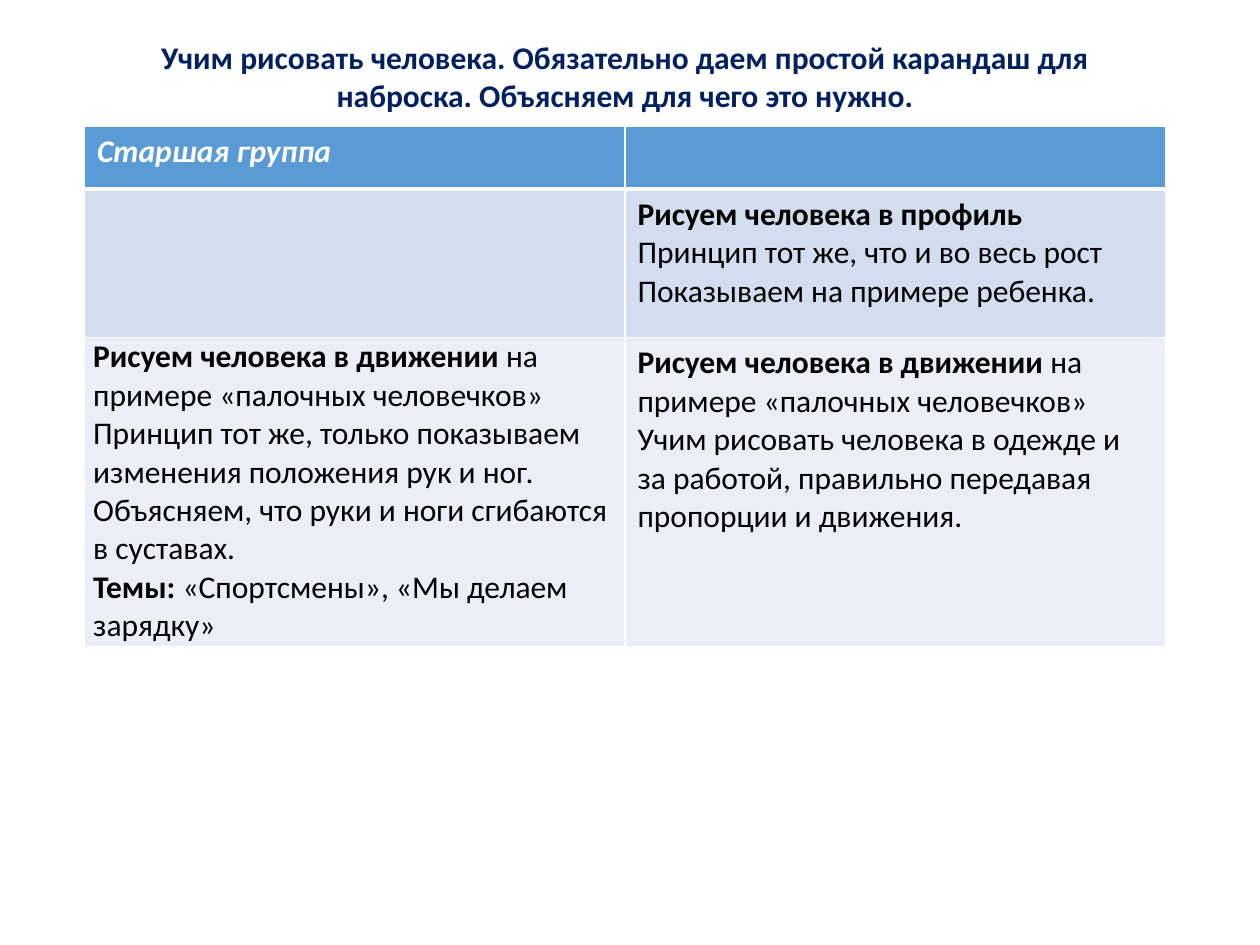
import pptx
import pptx.dml.color
import pptx.enum.text
import pptx.oxml
import pptx.oxml.ns
import pptx.util

Inches = pptx.util.Inches

THEME = {
    "font": "Calibri",
    "size": 18,
    "title": "002060",
    "text": "000000",
    "header_text": "FFFFFF",
    "border": "FFFFFF",
    "row_fills": ["5B9BD5", "D2DEEF", "EAEFF7"],
}

TITLE = ("Учим рисовать человека. Обязательно даем простой карандаш для наброска. "
         "Объясняем для чего это нужно.")

# Each cell is a list of paragraphs; each paragraph is a list of (text, bold) runs.
MOVEMENT = [("Рисуем человека в движении ", True),
            ("на примере «палочных человечков»", False)]
ROWS = [
    [[[("Старшая группа", True)]], []],
    [[], [
        [("Рисуем человека в профиль", True)],
        [("Принцип тот же, что и во весь рост", False)],
        [("Показываем на примере ребенка.", False)],
    ]],
    [[
        MOVEMENT,
        [("Принцип тот же, только показываем изменения положения рук и ног. "
          "Объясняем, что руки и ноги сгибаются в суставах.", False)],
        [("Темы:", True), (" «Спортсмены», «Мы делаем зарядку»", False)],
    ], [
        MOVEMENT,
        [("Учим рисовать человека в одежде и за работой, правильно передавая "
          "пропорции и движения.", False)],
    ]],
]

LEFT, WIDTH = 0.67, 8.58
TITLE_TOP, TITLE_HEIGHT = 0.25, 0.75
TABLE_TOP = 1
ROW_HEIGHTS = [0.5, 1.18, 2.45]
TIGHT_CELL = (2, 0)
TIGHT_MARGINS = {"margin_left": 0.07, "margin_top": 0,
                 "margin_right": 0.07, "margin_bottom": 0}


def add_run(paragraph, text, color, **font_format):
    run = paragraph.add_run()
    run.text = text
    values = {"name": THEME["font"], "size": pptx.util.Pt(THEME["size"]), **font_format}
    for name, value in values.items():
        setattr(run.font, name, value)
    run.font.color.rgb = pptx.dml.color.RGBColor.from_string(color)


def set_borders(cell, bottom_width):
    """Draw the four cell borders; schema order puts them before the fill."""
    properties = cell._tc.get_or_add_tcPr()
    widths = {"lnL": 1, "lnR": 1, "lnT": 1, "lnB": bottom_width}
    for index, (tag, width) in enumerate(widths.items()):
        properties.insert(index, pptx.oxml.parse_xml(
            f'<a:{tag} {pptx.oxml.ns.nsdecls("a")} w="{pptx.util.Pt(width)}">'
            f'<a:solidFill><a:srgbClr val="{THEME["border"]}"/></a:solidFill></a:{tag}>'))


def add_title(slide):
    box = slide.shapes.add_textbox(Inches(LEFT), Inches(TITLE_TOP),
                                   Inches(WIDTH), Inches(TITLE_HEIGHT))
    box.text_frame.word_wrap = True
    paragraph = box.text_frame.paragraphs[0]
    paragraph.alignment = pptx.enum.text.PP_ALIGN.CENTER
    add_run(paragraph, TITLE, THEME["title"], bold=True)


def fill_cell(cell, paragraphs, row_index):
    is_header = row_index == 0
    cell.fill.solid()
    cell.fill.fore_color.rgb = pptx.dml.color.RGBColor.from_string(
        THEME["row_fills"][row_index])
    set_borders(cell, 3 if is_header else 1)
    color = THEME["header_text"] if is_header else THEME["text"]
    frame = cell.text_frame
    for index, runs in enumerate(paragraphs):
        paragraph = frame.add_paragraph() if index else frame.paragraphs[0]
        for text, bold in runs:
            add_run(paragraph, text, color, bold=bold, italic=is_header)


def add_group_table(slide):
    column_count = len(ROWS[0])
    table = slide.shapes.add_table(
        len(ROWS), column_count, Inches(LEFT), Inches(TABLE_TOP),
        Inches(WIDTH), Inches(sum(ROW_HEIGHTS))).table
    for column in table.columns:
        column.width = Inches(WIDTH / column_count)
    for row_index, (height, cells) in enumerate(zip(ROW_HEIGHTS, ROWS)):
        table.rows[row_index].height = Inches(height)
        for column_index, paragraphs in enumerate(cells):
            fill_cell(table.cell(row_index, column_index), paragraphs, row_index)
    for name, value in TIGHT_MARGINS.items():
        setattr(table.cell(*TIGHT_CELL), name, Inches(value))


def main():
    presentation = pptx.Presentation()
    presentation.slide_width = Inches(10)
    presentation.slide_height = Inches(7.5)
    slide = presentation.slides.add_slide(presentation.slide_layouts[6])
    add_title(slide)
    add_group_table(slide)
    presentation.save("out.pptx")


if __name__ == "__main__":
    main()
